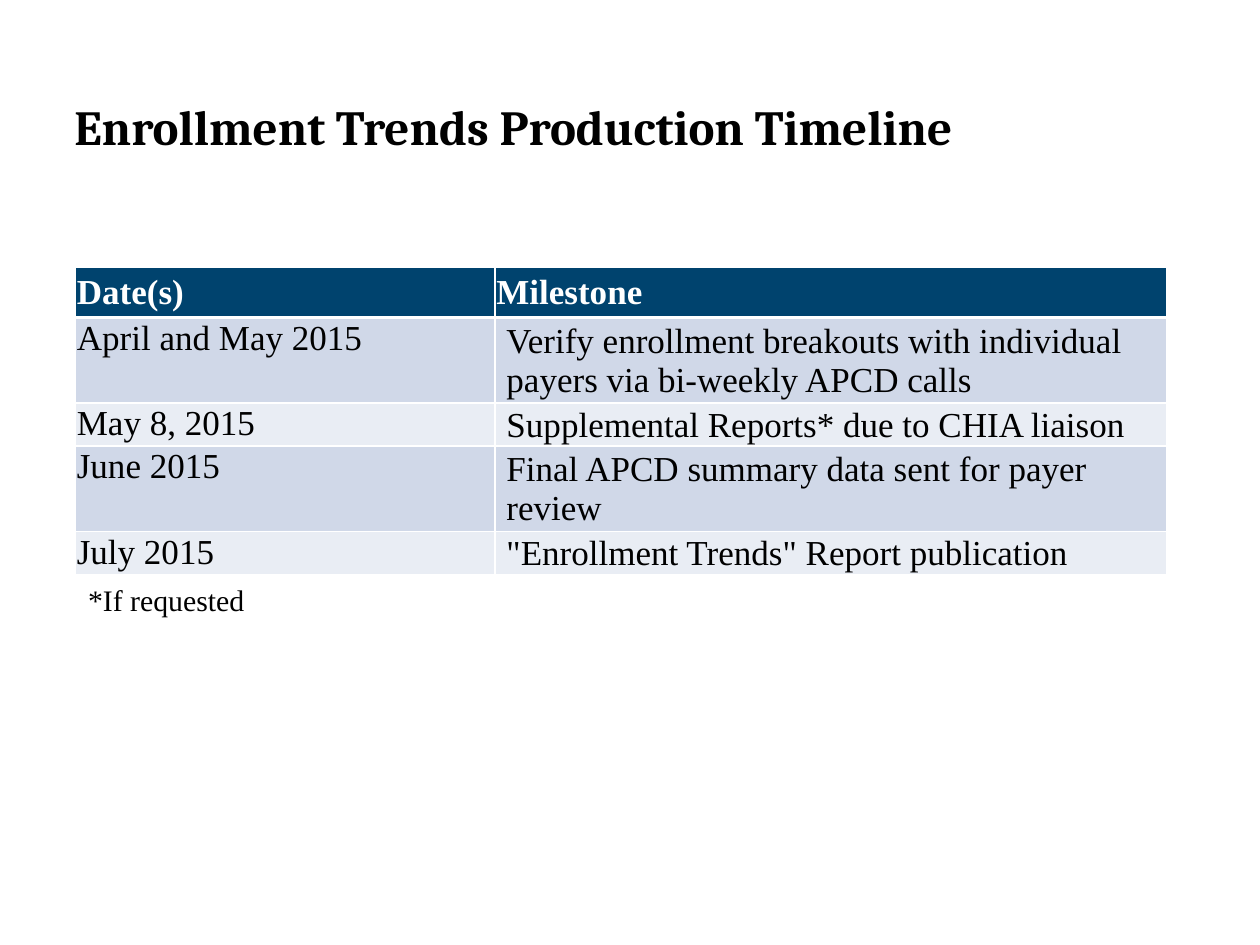
from dataclasses import dataclass
from lxml.etree import SubElement as Sub
from pptx import Presentation
from pptx.dml.color import RGBColor as RGB
from pptx.enum.text import MSO_ANCHOR as Anchor, MSO_AUTO_SIZE as Fit, PP_ALIGN as Align
from pptx.oxml.ns import qn
from pptx.util import Inches, Pt


@dataclass(frozen=True)
class Theme:
    ink: str = "000000"
    white: str = "FFFFFF"
    head: str = "00436E"
    bands: tuple = ("D0D8E8", "E9EDF4")
    serif: str = "Cambria"
    body: str = "Times New Roman"
    title: int = 28
    cell: int = 20
    note: int = 17


THEME = Theme()
COLS = (3.33, 5.33)
TALL, SHORT = 0.68, 0.34
HEADS = ("Date(s)", "Milestone")
STEPS = (
    ("April and May 2015",
     "Verify enrollment breakouts with individual payers via bi-weekly APCD calls", TALL),
    ("May 8, 2015", "Supplemental Reports* due to CHIA liaison", SHORT),
    ("June 2015", "Final APCD summary data sent for payer review", TALL),
    ("July 2015", '"Enrollment Trends" Report publication', SHORT),
)


def add_run(frame, text, size, color=THEME.ink, face=THEME.body, bold=False):
    para = frame.paragraphs[0]
    para.alignment = Align.LEFT
    run = para.add_run()
    run.text = text
    font = run.font
    font.name, font.size, font.bold = face, Pt(size), bold
    font.color.rgb = RGB.from_string(color)


def add_lines(cell, widths):
    props = cell._tc.get_or_add_tcPr()
    for side, width in widths.items():
        line = Sub(props, qn(f"a:ln{side}"), w=str(Pt(width)))
        fill = Sub(line, qn("a:solidFill"))
        Sub(fill, qn("a:srgbClr"), val=THEME.white)


def fill_cell(cell, text, row, col):
    head = row == 0
    add_lines(cell, {"L": 1, "R": 1, "T": 1.5 if row == 1 else 1, "B": 1.5 if head else 1})
    cell.fill.solid()
    tone = THEME.head if head else THEME.bands[(row - 1) % 2]
    cell.fill.fore_color.rgb = RGB.from_string(tone)
    cell.margin_left = Inches(0.09 if col and not head else 0.01)
    cell.margin_top = cell.margin_right = Inches(0.01)
    cell.margin_bottom = 0
    cell.vertical_anchor = Anchor.MIDDLE if head or col else Anchor.TOP
    add_run(cell.text_frame, text, THEME.cell, THEME.white if head else THEME.ink, bold=head)


def add_title(slide, box):
    shape = slide.shapes.title
    shape.left, shape.top, shape.width, shape.height = map(Inches, box)
    frame = shape.text_frame
    frame.auto_size = Fit.NONE
    frame.vertical_anchor = Anchor.MIDDLE
    add_run(frame, "Enrollment Trends Production Timeline", THEME.title,
            face=THEME.serif, bold=True)


def add_steps(slide, box):
    rows = ((*HEADS, 0.4), *STEPS)
    table = slide.shapes.add_table(len(rows), len(COLS), *map(Inches, box)).table
    for col, width in zip(table.columns, COLS):
        col.width = Inches(width)
    for i, (*texts, height) in enumerate(rows):
        table.rows[i].height = Inches(height)
        for j, text in enumerate(texts):
            fill_cell(table.cell(i, j), text, i, j)


def add_note(slide, box):
    frame = slide.shapes.add_textbox(*map(Inches, box)).text_frame
    frame.word_wrap = False
    frame.auto_size = Fit.SHAPE_TO_FIT_TEXT
    add_run(frame, "*If requested", THEME.note)


def main():
    deck = Presentation()
    deck.slide_width, deck.slide_height = Inches(10), Inches(7.5)
    slide = deck.slides.add_slide(deck.slide_layouts[5])
    add_title(slide, (0.49, 0.65, 8.79, 0.7))
    add_steps(slide, (0.6, 2.12, 8.66, 2.44))
    add_note(slide, (0.6, 4.57, 1.45, 0.39))
    deck.save("out.pptx")


if __name__ == "__main__":
    main()
